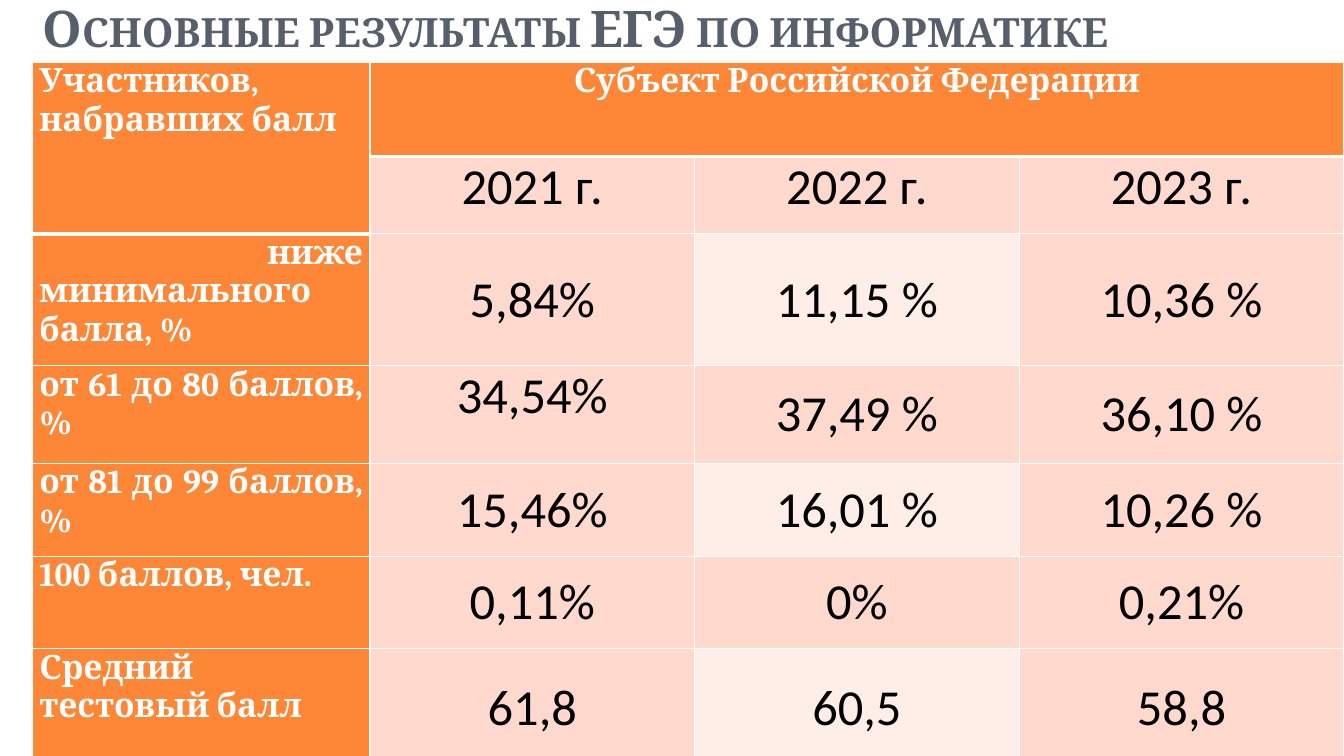
from dataclasses import dataclass
from typing import Any

from lxml import etree
from pptx import Presentation
from pptx.dml.color import RGBColor
from pptx.enum.text import MSO_ANCHOR, MSO_AUTO_SIZE, PP_ALIGN
from pptx.oxml.ns import qn
from pptx.util import Inches, Pt

TOP, MID, LOW = MSO_ANCHOR.TOP, MSO_ANCHOR.MIDDLE, MSO_ANCHOR.BOTTOM
LEFT, CENTER, JUST = PP_ALIGN.LEFT, PP_ALIGN.CENTER, PP_ALIGN.JUSTIFY

WHITE = RGBColor(0xFF, 0xFF, 0xFF)
BLACK = RGBColor(0, 0, 0)
SLATE = RGBColor(0x57, 0x5F, 0x6D)
ORANGE = RGBColor(0xFE, 0x86, 0x37)
PEACH = RGBColor(0xFF, 0xD9, 0xCE)
PALE = RGBColor(0xFF, 0xED, 0xE8)

# Slide size and the grid of the table
WIDTH, HEIGHT = Inches(13.33), Inches(7.5)
X, Y = round(WIDTH * 0.024), round(HEIGHT * 0.083)
COLS = (335, 322, 322, 322)
ROWS = (93, 65, 131, 97, 92, 92, 118)

TITLE = {"name": "Cambria", "size": Pt(36), "bold": True}
LABEL = {"name": "Cambria", "size": Pt(24), "bold": True}
VALUE = {"name": "Calibri", "size": Pt(36), "bold": False}


@dataclass
class Item:
    text: str
    font: dict[str, Any]
    ink: RGBColor
    fill: RGBColor
    align: PP_ALIGN = CENTER
    anchor: MSO_ANCHOR = MID


def head(text: str, align: PP_ALIGN = JUST) -> Item:
    return Item(text, LABEL, WHITE, ORANGE, align, TOP)


def value(text: str, fill: RGBColor = PEACH, anchor: MSO_ANCHOR = MID) -> Item:
    return Item(text, VALUE, BLACK, fill, CENTER, anchor)


def apply(target: Any, traits: dict[str, Any]) -> None:
    for name, trait in traits.items():
        setattr(target, name, trait)


def share(total: int, parts: tuple[int, ...]) -> list[int]:
    return [round(total * part / sum(parts)) for part in parts]


def write(frame: Any, text: str, font: dict[str, Any], ink: RGBColor,
          align: PP_ALIGN) -> Any:
    para = frame.paragraphs[0]
    para.alignment = align
    run = para.add_run()
    run.text = text
    apply(run.font, font)
    run.font.color.rgb = ink
    return run


def border(cell: Any, base: float) -> None:
    props = cell._tc.get_or_add_tcPr()
    for side, width in (("L", 1), ("R", 1), ("T", 1), ("B", base)):
        line = etree.SubElement(props, qn(f"a:ln{side}"), w=str(Pt(width)))
        paint = etree.SubElement(line, qn("a:solidFill"))
        etree.SubElement(paint, qn("a:srgbClr"), val=str(WHITE))


def draw(cell: Any, item: Item) -> None:
    apply(cell, {"margin_left": Inches(0.07), "margin_right": Inches(0.07),
                 "margin_top": 0, "margin_bottom": 0,
                 "vertical_anchor": item.anchor})
    cell.fill.solid()
    cell.fill.fore_color.rgb = item.fill
    write(cell.text_frame, item.text, item.font, item.ink, item.align)


# Table contents: labels, then one value a year
YEARS = ("2021 г.", "2022 г.", "2023 г.")
RESULTS = (
    (" ниже минимального балла, %", "5,84%", "11,15 %", "10,36 %"),
    ("от 61 до 80 баллов, %", "34,54%", "37,49 %", "36,10 %"),
    ("от 81 до 99 баллов, %", "15,46%", "16,01 %", "10,26 %"),
    ("100 баллов, чел.", "0,11%", "0%", "0,21%"),
    ("Средний тестовый балл", "61,8", "60,5", "58,8"),
)


def items() -> dict[tuple[int, int], Item]:
    found = {(0, 0): head("Участников, набравших балл"),
             (0, 1): head("Субъект Российской Федерации", CENTER)}
    for col, year in enumerate(YEARS, 1):
        found[1, col] = value(year, anchor=TOP)
    for row, (label, *marks) in enumerate(RESULTS, 2):
        last = row == len(ROWS) - 1
        found[row, 0] = head(label, LEFT if last else JUST)
        for col, mark in enumerate(marks, 1):
            # Every other row is paler in the middle year
            pale = col == 2 and row % 2 == 0
            found[row, col] = value(mark, PALE if pale else PEACH)
    found[3, 1].anchor = TOP
    return found


def main() -> None:
    deck = Presentation()
    deck.slide_width, deck.slide_height = WIDTH, HEIGHT
    slide = deck.slides.add_slide(deck.slide_layouts[5])

    # Title
    title = slide.shapes.title
    apply(title, {"left": X, "top": Inches(0.1),
                  "width": round(WIDTH * 1.02), "height": Y - Inches(0.1)})
    apply(title.text_frame, {"word_wrap": True, "vertical_anchor": LOW,
                             "auto_size": MSO_AUTO_SIZE.NONE})
    run = write(title.text_frame, "Основные результаты ЕГЭ по информатике",
                TITLE, SLATE, LEFT)
    run.font._element.set("cap", "small")

    # Table
    table = slide.shapes.add_table(len(ROWS), len(COLS), X, Y,
                                   WIDTH - X, HEIGHT - Y).table
    for col, width in zip(table.columns, share(WIDTH - X, COLS)):
        col.width = width
    for row, height in zip(table.rows, share(HEIGHT - Y, ROWS)):
        row.height = height
    table.cell(0, 0).merge(table.cell(1, 0))
    table.cell(0, 1).merge(table.cell(0, 3))
    for row in range(len(ROWS)):
        for col in range(len(COLS)):
            thick = row == 0 or (row, col) == (1, 0)
            border(table.cell(row, col), 3 if thick else 1)
    for (row, col), item in items().items():
        draw(table.cell(row, col), item)

    deck.save("out.pptx")


if __name__ == "__main__":
    main()
